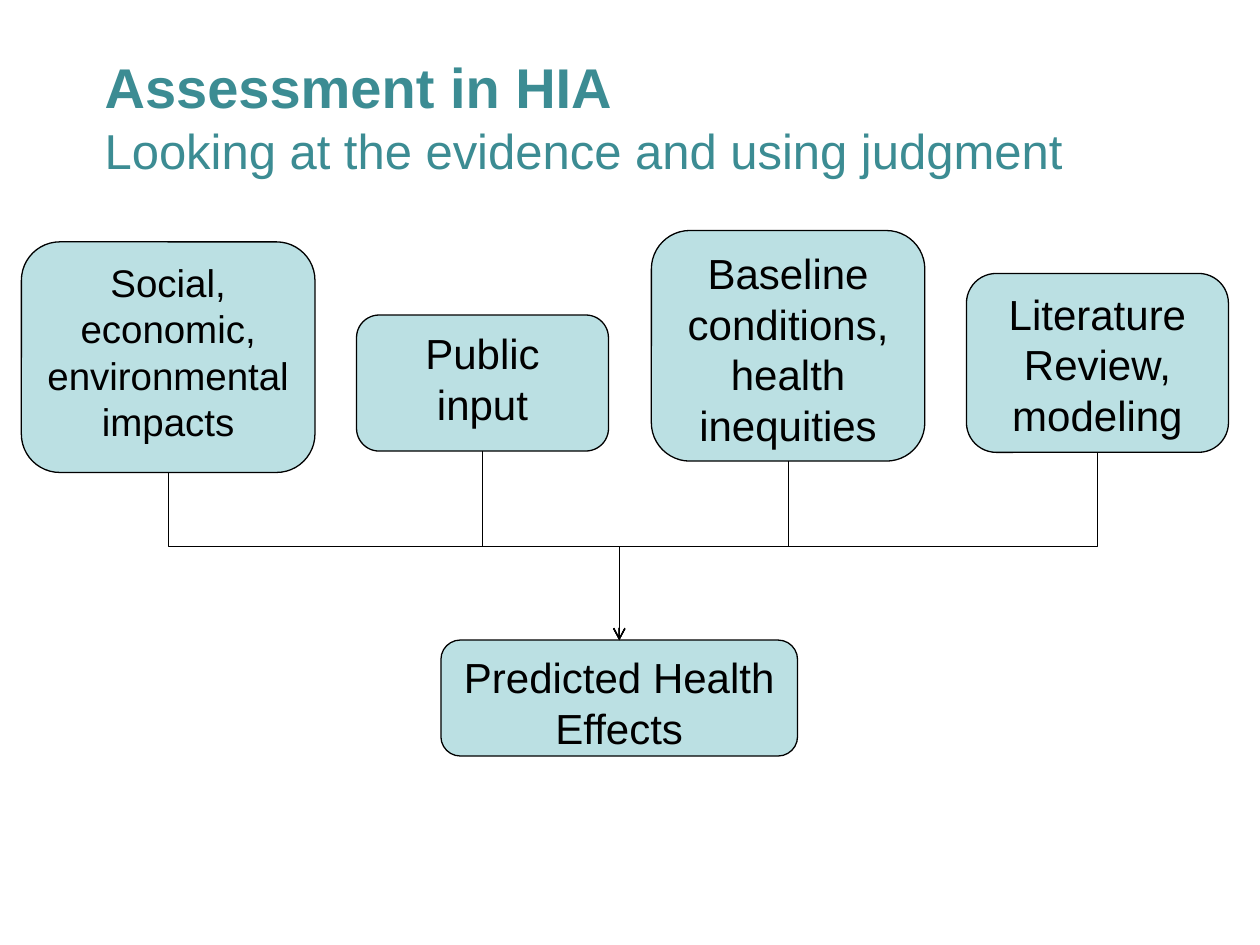
from lxml import etree
from pptx import Presentation
from pptx.dml.color import RGBColor
from pptx.enum.shapes import MSO_CONNECTOR, MSO_SHAPE
from pptx.enum.text import MSO_ANCHOR, MSO_AUTO_SIZE, PP_ALIGN
from pptx.oxml.ns import qn
from pptx.util import Inches, Pt

ELBOW = MSO_CONNECTOR.ELBOW
ROUNDED = MSO_SHAPE.ROUNDED_RECTANGLE
TOP = MSO_ANCHOR.TOP
NO_FIT = MSO_AUTO_SIZE.NONE
LEFT, CENTER = PP_ALIGN.LEFT, PP_ALIGN.CENTER

FONT = "Arial"
TEAL, PALE_TEAL, BLACK = "3C8C93", "BBE0E3", "000000"
TITLE_ONLY = 5
TOP_SIDE, BOTTOM_SIDE = 0, 2
BUS_Y = Inches(4.34)

# text, size, (left, top, width, height)
INPUTS = [
    ("Social, economic, environmental impacts", 22, (0.17, 1.92, 2.33, 1.83)),
    ("Public input", 24, (2.83, 2.5, 2, 1.08)),
    ("Baseline conditions, health inequities", 24, (5.17, 1.83, 2.17, 1.83)),
    ("Literature Review, modeling", 24, (7.67, 2.17, 2.08, 1.42)),
]
RESULT = ("Predicted Health Effects", 24, (3.5, 5.08, 2.83, 0.92))


def color(hex_value):
    return RGBColor.from_string(hex_value)


def add_span(para, text, size, hex_value, bold=False):
    span = para.add_run()
    span.text = text
    span.font.name = FONT
    span.font.size = Pt(size)
    span.font.bold = bold
    span.font.color.rgb = color(hex_value)


def place_title(page, box):
    title = page.shapes.title
    title.left, title.top, title.width, title.height = map(Inches, box)
    frame = title.text_frame
    frame.margin_left = frame.margin_right = 0
    frame.margin_top = frame.margin_bottom = 0
    frame.vertical_anchor = TOP
    frame.auto_size = NO_FIT
    frame.word_wrap = True
    para = frame.paragraphs[0]
    para.alignment = LEFT
    add_span(para, "Assessment in HIA", 32, TEAL, bold=True)
    para.add_line_break()
    line_break = para._p.find(qn("a:br"))
    etree.SubElement(line_break, qn("a:rPr"), sz="3200")
    add_span(para, "Looking at the evidence and using judgment", 28, TEAL)


def add_step(page, text, size, box):
    step = page.shapes.add_shape(ROUNDED, *map(Inches, box))
    step.shadow.inherit = False
    step.fill.solid()
    step.fill.fore_color.rgb = color(PALE_TEAL)
    step.line.color.rgb = color(BLACK)
    step.line.width = Pt(0.75)
    frame = step.text_frame
    frame.word_wrap = True
    frame.vertical_anchor = TOP
    para = frame.paragraphs[0]
    para.alignment = CENTER
    add_span(para, text, size, BLACK)
    return step


def add_elbow_arrow(page, source, target):
    """Run down from source to the shared bus line, across, and down to target."""
    start_x = source.left + source.width // 2
    start_y = source.top + source.height
    end_x = target.left + target.width // 2
    drop, reach = target.top - start_y, abs(end_x - start_x)

    arrow = page.shapes.add_connector(ELBOW, start_x, start_y, end_x, target.top)
    arrow.begin_connect(source, BOTTOM_SIDE)
    arrow.end_connect(target, TOP_SIDE)

    # A vertical-first elbow is the horizontal one turned a quarter round its centre.
    arrow.left = (start_x + end_x - drop) // 2
    arrow.top = (start_y + target.top - reach) // 2
    arrow.width, arrow.height = drop, reach
    goes_right = end_x > start_x
    properties = arrow._element.spPr
    transform = properties.find(qn("a:xfrm"))
    transform.set("rot", str((270 if goes_right else 90) * 60000))
    transform.set("flipH", "1" if goes_right else "0")
    transform.set("flipV", "0")

    guides = properties.find(qn("a:prstGeom")).find(qn("a:avLst"))
    bend = round((BUS_Y - start_y) / drop * 100000)
    etree.SubElement(guides, qn("a:gd"), name="adj1", fmla=f"val {bend}")

    arrow.line.color.rgb = color(BLACK)
    arrow.line.width = Pt(0.75)
    etree.SubElement(arrow.line._get_or_add_ln(), qn("a:tailEnd"), type="arrow")
    etree.SubElement(properties, qn("a:effectLst"))


def draw_flow(page, inputs, result):
    sources = [add_step(page, *step) for step in inputs]
    target = add_step(page, *result)
    for source in sources:
        add_elbow_arrow(page, source, target)


def main():
    deck = Presentation()
    deck.slide_width, deck.slide_height = Inches(10), Inches(7.5)
    page = deck.slides.add_slide(deck.slide_layouts[TITLE_ONLY])
    place_title(page, (0.83, 0.42, 8.67, 0.67))
    draw_flow(page, INPUTS, RESULT)
    deck.save("out.pptx")


if __name__ == "__main__":
    main()
